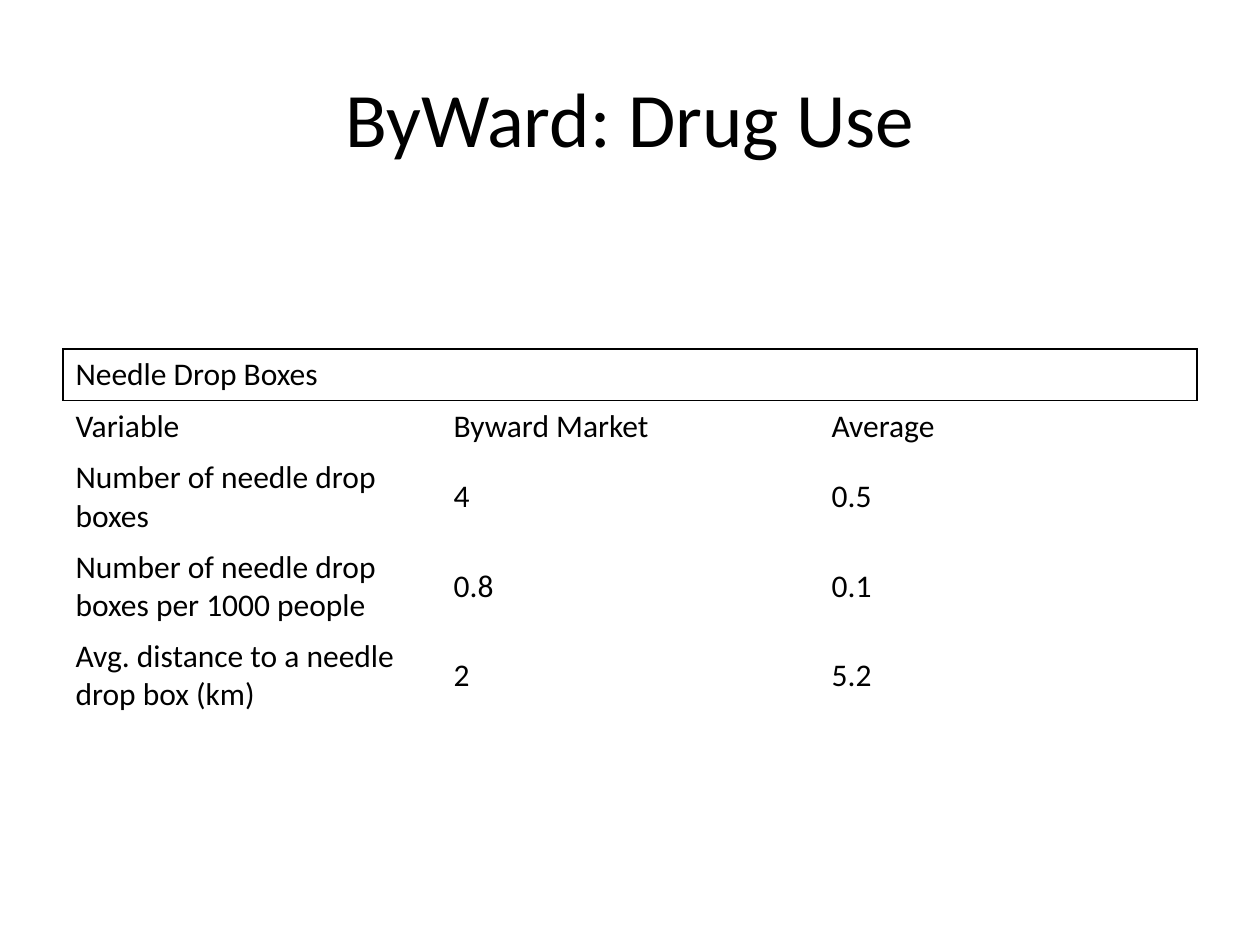
from dataclasses import dataclass

from lxml.etree import SubElement
from pptx import Presentation
from pptx.dml.color import RGBColor
from pptx.enum.text import MSO_ANCHOR, PP_ALIGN
from pptx.oxml.ns import qn
from pptx.table import Table, _Cell
from pptx.text.text import TextFrame
from pptx.util import Inches, Pt


@dataclass(frozen=True)
class Theme:
    font: str = "Calibri"
    ink: str = "000000"
    title: int = 44
    body: int = 18
    rule: float = 1
    plain: str = "{2D5ABB26-0587-4C30-8999-92F81FD0307C}"  # no style, no grid


@dataclass(frozen=True)
class Row:
    height: float
    cells: tuple[str, ...]


THEME = Theme()
COLS = (3, 3, 3)
ROWS = (
    Row(0.41, ("Needle Drop Boxes",)),
    Row(0.41, ("Variable", "Byward Market", "Average")),
    Row(0.71, ("Number of needle drop boxes", "4", "0.5")),
    Row(0.71, ("Number of needle drop boxes per 1000 people", "0.8", "0.1")),
    Row(0.71, ("Avg. distance to a needle drop box (km)", "2", "5.2")),
)


def write(frame: TextFrame, text: str, *, size: int, align=PP_ALIGN.LEFT) -> None:
    frame.word_wrap = True
    para = frame.paragraphs[0]
    para.alignment = align
    run = para.add_run()
    run.text = text
    run.font.name = THEME.font
    run.font.size = Pt(size)
    run.font.color.rgb = RGBColor.from_string(THEME.ink)


def outline(cell: _Cell) -> None:
    """Rule all four sides; call before the cell gets its fill."""
    props = cell._tc.get_or_add_tcPr()
    for side in ("lnL", "lnR", "lnT", "lnB"):
        line = SubElement(props, qn(f"a:{side}"), w=str(Pt(THEME.rule)))
        fill = SubElement(line, qn("a:solidFill"))
        SubElement(fill, qn("a:srgbClr"), val=THEME.ink)


def fill_table(table: Table) -> None:
    table.first_row = table.horz_banding = False
    table._tbl.tblPr.find(qn("a:tableStyleId")).text = THEME.plain
    for col, width in zip(table.columns, COLS):
        col.width = Inches(width)
    head = table.cell(0, 0)
    head.merge(table.cell(0, len(COLS) - 1))
    outline(head)
    for i, row in enumerate(ROWS):
        table.rows[i].height = Inches(row.height)
        for j, text in enumerate(row.cells):
            cell = table.cell(i, j)
            cell.fill.background()
            cell.vertical_anchor = MSO_ANCHOR.MIDDLE
            write(cell.text_frame, text, size=THEME.body)


def main() -> None:
    deck = Presentation()
    deck.slide_width, deck.slide_height = Inches(10), Inches(7.5)
    slide = deck.slides.add_slide(deck.slide_layouts[6])
    title = slide.shapes.add_textbox(Inches(0.5), Inches(0.3), Inches(9), Inches(1.25))
    title.text_frame.vertical_anchor = MSO_ANCHOR.MIDDLE
    write(title.text_frame, "ByWard: Drug Use", size=THEME.title, align=PP_ALIGN.CENTER)
    high = sum(row.height for row in ROWS)
    grid = slide.shapes.add_table(
        len(ROWS), len(COLS), Inches(0.5), Inches(2.77), Inches(sum(COLS)), Inches(high)
    )
    fill_table(grid.table)
    deck.save("out.pptx")


if __name__ == "__main__":
    main()
